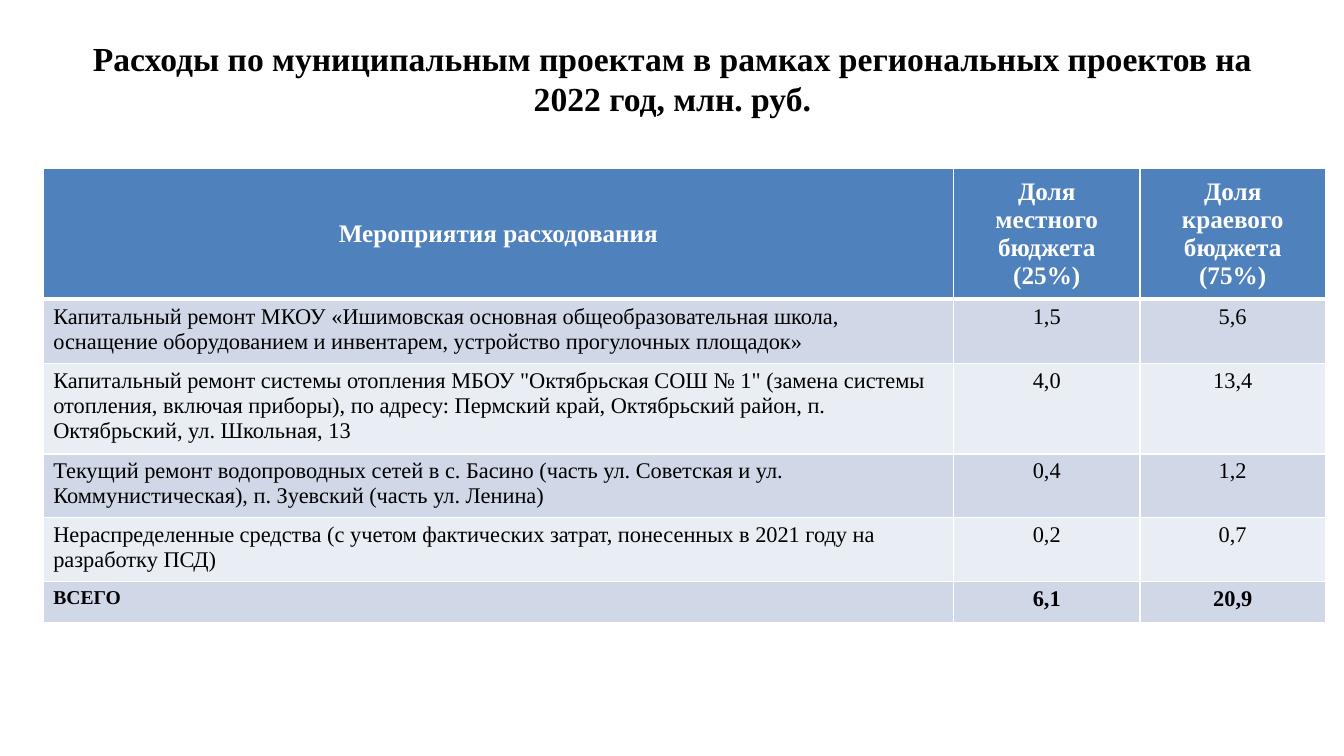
"""Builds a slide with a table of municipal project spending for 2022."""
import dataclasses

import pptx
import pptx.dml.color
import pptx.enum.text
import pptx.oxml
import pptx.oxml.ns
import pptx.util

Cm = pptx.util.Cm
Pt = pptx.util.Pt
ALIGN = pptx.enum.text.PP_ALIGN
ANCHOR = pptx.enum.text.MSO_ANCHOR

TITLE = "Расходы по муниципальным проектам в рамках региональных проектов на 2022 год, млн. руб."
HEADER = ("Мероприятия расходования", "Доля местного бюджета (25%)", "Доля краевого бюджета (75%)")
EXPENSES = [
    ("Капитальный ремонт МКОУ «Ишимовская основная общеобразовательная школа, "
     "оснащение оборудованием и инвентарем, устройство прогулочных площадок»", "1,5", "5,6"),
    ("Капитальный ремонт системы отопления МБОУ \"Октябрьская СОШ № 1\" (замена системы "
     "отопления, включая приборы), по адресу: Пермский край, Октябрьский район, "
     "п. Октябрьский, ул. Школьная, 13", "4,0", "13,4"),
    ("Текущий ремонт водопроводных сетей в с. Басино (часть ул. Советская и "
     "ул. Коммунистическая), п. Зуевский (часть ул. Ленина)", "0,4", "1,2"),
    ("Нераспределенные средства (с учетом фактических затрат, понесенных в 2021 году "
     "на разработку ПСД)", "0,2", "0,7"),
]
TOTAL = ("ВСЕГО", "6,1", "20,9")

SLIDE_SIZE = (33.87, 19.05)
TITLE_BOX = (1.45, 0.69, 30.99, 2.54)
TABLE_ORIGIN = (1.09, 4.24)
COLUMN_WIDTHS = (22.94, 4.7, 4.67)
ROW_HEIGHTS = (3.05, 1.52, 2.16, 1.52, 1.52, 1.04)


@dataclasses.dataclass(frozen=True)
class Theme:
    font: str = "Times New Roman"
    text: str = "000000"
    light: str = "FFFFFF"
    header: str = "4F81BD"
    bands: tuple = ("D0D8E8", "E9EDF4")
    title_size: int = 24
    header_size: int = 18
    body_size: int = 16
    total_size: int = 14
    border: int = 1
    header_border: int = 3


THEME = Theme()


def rgb(value):
    return pptx.dml.color.RGBColor.from_string(value)


def write(frame, text, size, color, bold, alignment):
    frame.word_wrap = True
    paragraph = frame.paragraphs[0]
    paragraph.alignment = alignment
    run = paragraph.add_run()
    run.text = text
    run.font.name = THEME.font
    run.font.size = Pt(size)
    run.font.bold = bold
    run.font.color.rgb = rgb(color)


def set_borders(cell, top, bottom):
    properties = cell._tc.get_or_add_tcPr()
    widths = {"L": THEME.border, "R": THEME.border, "T": top, "B": bottom}
    for position, (side, width) in enumerate(widths.items()):
        line = pptx.oxml.parse_xml(
            f'<a:ln{side} {pptx.oxml.ns.nsdecls("a")} w="{int(Pt(width))}">'
            f'<a:solidFill><a:srgbClr val="{THEME.light}"/></a:solidFill></a:ln{side}>')
        properties.insert(position, line)


def add_title(slide):
    frame = slide.shapes.add_textbox(*map(Cm, TITLE_BOX)).text_frame
    frame.vertical_anchor = ANCHOR.MIDDLE
    write(frame, TITLE, THEME.title_size, THEME.text, True, ALIGN.CENTER)


def fill_cell(cell, text, row, column, last_row):
    is_header = row == 0
    is_total = row == last_row
    size = THEME.header_size if is_header else THEME.body_size
    if is_total and column == 0:
        size = THEME.total_size
    cell.fill.solid()
    cell.fill.fore_color.rgb = rgb(THEME.header if is_header else THEME.bands[(row - 1) % 2])
    cell.vertical_anchor = ANCHOR.MIDDLE if is_header else ANCHOR.TOP
    write(cell.text_frame, text, size, THEME.light if is_header else THEME.text,
          is_header or is_total, ALIGN.CENTER if is_header or column else ALIGN.LEFT)
    set_borders(cell, THEME.header_border if row == 1 else THEME.border,
                THEME.header_border if is_header else THEME.border)


def add_expense_table(slide):
    rows = [HEADER, *EXPENSES, TOTAL]
    table = slide.shapes.add_table(
        len(rows), len(HEADER), *map(Cm, TABLE_ORIGIN),
        Cm(sum(COLUMN_WIDTHS)), Cm(sum(ROW_HEIGHTS))).table
    for column, width in zip(table.columns, COLUMN_WIDTHS):
        column.width = Cm(width)
    for row, height in zip(table.rows, ROW_HEIGHTS):
        row.height = Cm(height)
    for row, texts in enumerate(rows):
        for column, text in enumerate(texts):
            fill_cell(table.cell(row, column), text, row, column, len(rows) - 1)


def main():
    presentation = pptx.Presentation()
    presentation.slide_width, presentation.slide_height = map(Cm, SLIDE_SIZE)
    slide = presentation.slides.add_slide(presentation.slide_layouts[6])
    add_title(slide)
    add_expense_table(slide)
    presentation.save("out.pptx")


if __name__ == "__main__":
    main()
